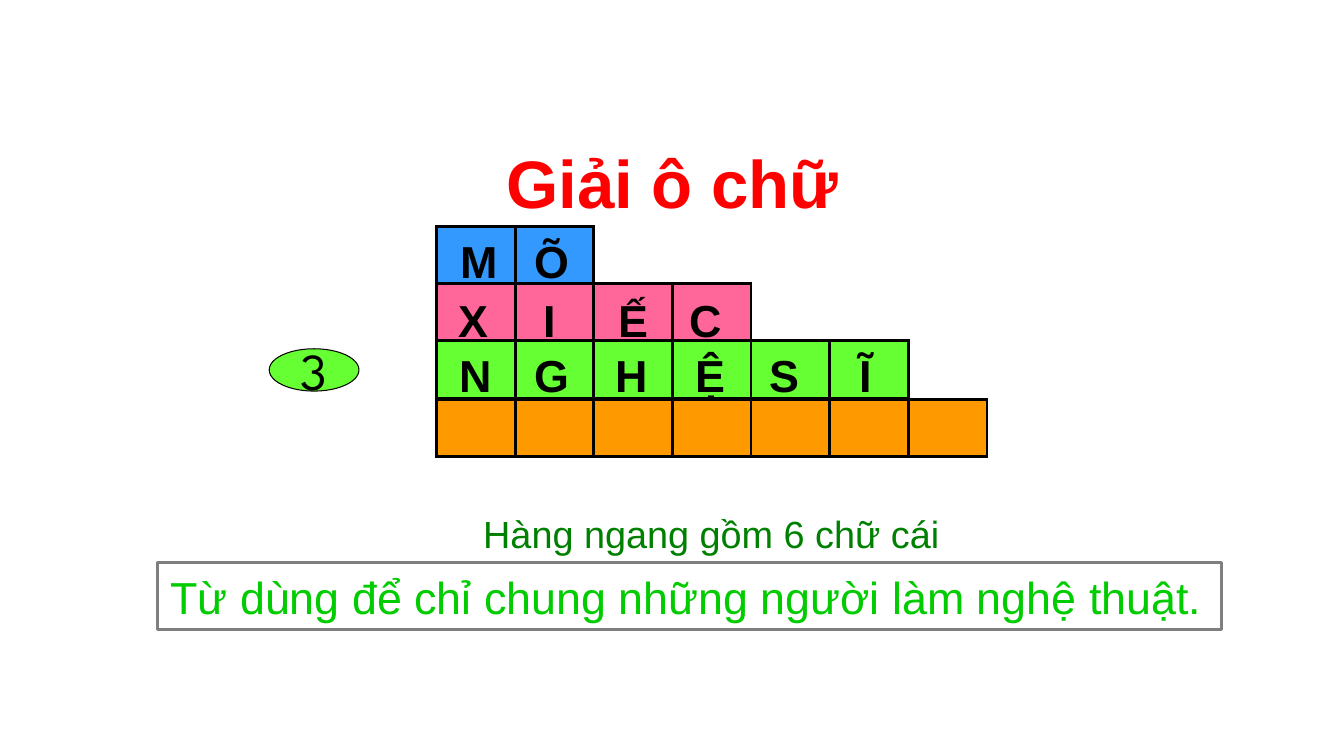
import dataclasses

import lxml.etree
import pptx
import pptx.dml.color
import pptx.enum.shapes
import pptx.enum.text
import pptx.oxml.ns
import pptx.util
from pptx.util import Inches

ALIGN = pptx.enum.text.PP_ALIGN
ANCHOR = pptx.enum.text.MSO_ANCHOR
SHAPE = pptx.enum.shapes.MSO_SHAPE


@dataclasses.dataclass(frozen=True)
class Theme:
    """Hold the colours, fonts and sizes of the slide."""
    font: str = "Arial"
    number_font: str = "League Spartan"
    ink: str = "000000"
    title: str = "FF0000"
    hint: str = "008000"
    clue: str = "00CC00"
    clue_frame: str = "7F7F7F"
    badge: str = "66FF33"
    rows: tuple = ("3399FF", "FF6699", "66FF33", "FF9900")
    title_size: int = 48
    number_size: int = 37
    letter_size: int = 32
    hint_size: int = 27
    thick: float = 2.25
    thin: float = 0.75


THEME = Theme()
GRID_LEFT, CELL_WIDTH = 4.33, 0.78
ROW_TOPS = (2.25, 2.81, 3.38, 3.96)
ROW_HEIGHT = 0.57
ROW_LENGTHS = (2, 4, 6, 7)
LETTER_BOX = (0.65, 0.67)
ANSWERS = (
    (2.25, "MÕ", (4.44, 5.15)),
    (2.83, "XIẾC", (4.37, 5.13, 5.96, 6.67)),
    (3.38, "NGHỆSĨ", (4.39, 5.17, 5.94, 6.72, 7.5, 8.26)),
)
LEFT_ALIGNED = "MGS"


def rgb(colour):
    """Turn a hex string into a colour."""
    return pptx.dml.color.RGBColor.from_string(colour)


def write(shape, text, *, colour, size, font=THEME.font, bold=False,
          align=ALIGN.CENTER, anchor=ANCHOR.TOP, wrap=True):
    """Put one formatted paragraph into a shape."""
    frame = shape.text_frame
    frame.auto_size = pptx.enum.text.MSO_AUTO_SIZE.NONE
    frame.word_wrap = wrap
    frame.vertical_anchor = anchor
    frame.margin_left = frame.margin_right = Inches(0.13)
    frame.margin_top = frame.margin_bottom = Inches(0.07)
    paragraph = frame.paragraphs[0]
    paragraph.alignment = align
    run = paragraph.add_run()
    run.text = text
    run.font.name = font
    run.font.size = pptx.util.Pt(size)
    run.font.bold = bold
    run.font.color.rgb = rgb(colour)


def add_label(slide, text, left, top, width, height, **style):
    """Add a text box with formatted text."""
    label = slide.shapes.add_textbox(
        Inches(left), Inches(top), Inches(width), Inches(height))
    write(label, text, **style)


def add_panel(slide, kind, left, top, width, height, *, line, weight, fill=None):
    """Add an outlined preset shape, filled or open."""
    panel = slide.shapes.add_shape(
        kind, Inches(left), Inches(top), Inches(width), Inches(height))
    panel.shadow.inherit = False
    if fill:
        panel.fill.solid()
        panel.fill.fore_color.rgb = rgb(fill)
    else:
        panel.fill.background()
    panel.line.color.rgb = rgb(line)
    panel.line.width = pptx.util.Pt(weight)
    return panel


def add_borders(cell, colour, weight):
    """Draw a line on all four sides of a table cell."""
    qn = pptx.oxml.ns.qn
    properties = cell._tc.get_or_add_tcPr()
    for side in ("a:lnL", "a:lnR", "a:lnT", "a:lnB"):
        border = lxml.etree.SubElement(
            properties, qn(side), w=str(pptx.util.Pt(weight)))
        solid = lxml.etree.SubElement(border, qn("a:solidFill"))
        lxml.etree.SubElement(solid, qn("a:srgbClr"), val=colour)


def add_crossword_row(slide, top, length, colour):
    """Add one row of coloured crossword cells."""
    row = slide.shapes.add_table(
        1, length, Inches(GRID_LEFT), Inches(top),
        Inches(CELL_WIDTH * length), Inches(ROW_HEIGHT)).table
    row.first_row = row.horz_banding = False
    for cell in row.iter_cells():
        add_borders(cell, THEME.ink, THEME.thick)
        cell.fill.solid()
        cell.fill.fore_color.rgb = rgb(colour)


def add_answer(slide, top, word, lefts):
    """Lay the letters of an answer over its row."""
    for letter, left in zip(word, lefts):
        align = ALIGN.LEFT if letter in LEFT_ALIGNED else ALIGN.CENTER
        add_label(slide, letter, left, top, *LETTER_BOX, colour=THEME.ink,
                  size=THEME.letter_size, bold=True, align=align)


def main():
    """Build and save the crossword slide."""
    deck = pptx.Presentation()
    deck.slide_width, deck.slide_height = Inches(13.33), Inches(7.5)
    slide = deck.slides.add_slide(deck.slide_layouts[5])

    title = slide.shapes.title
    title.left, title.top = Inches(4.56), Inches(1.33)
    title.width, title.height = Inches(4.22), Inches(0.92)
    write(title, "Giải ô chữ", colour=THEME.title, size=THEME.title_size,
          bold=True, wrap=False)

    add_label(slide, "Hàng ngang gồm 6 chữ cái", 4.11, 5, 5.89, 0.58,
              colour=THEME.hint, size=THEME.hint_size)
    clue = add_panel(slide, SHAPE.RECTANGLE, 1.56, 5.58, 10.56, 0.67,
                     line=THEME.clue_frame, weight=THEME.thick)
    write(clue, "Từ dùng để chỉ chung những người làm nghệ thuật.",
          colour=THEME.clue, size=THEME.letter_size, align=ALIGN.LEFT)

    for top, length, colour in zip(ROW_TOPS, ROW_LENGTHS, THEME.rows):
        add_crossword_row(slide, top, length, colour)

    row_number = add_panel(slide, SHAPE.OVAL, 2.67, 3.46, 0.89, 0.42,
                           line=THEME.ink, weight=THEME.thin, fill=THEME.badge)
    write(row_number, "3", colour=THEME.ink, size=THEME.number_size,
          font=THEME.number_font, anchor=ANCHOR.MIDDLE, wrap=False)

    for top, word, lefts in ANSWERS:
        add_answer(slide, top, word, lefts)

    deck.save("out.pptx")


if __name__ == "__main__":
    main()
